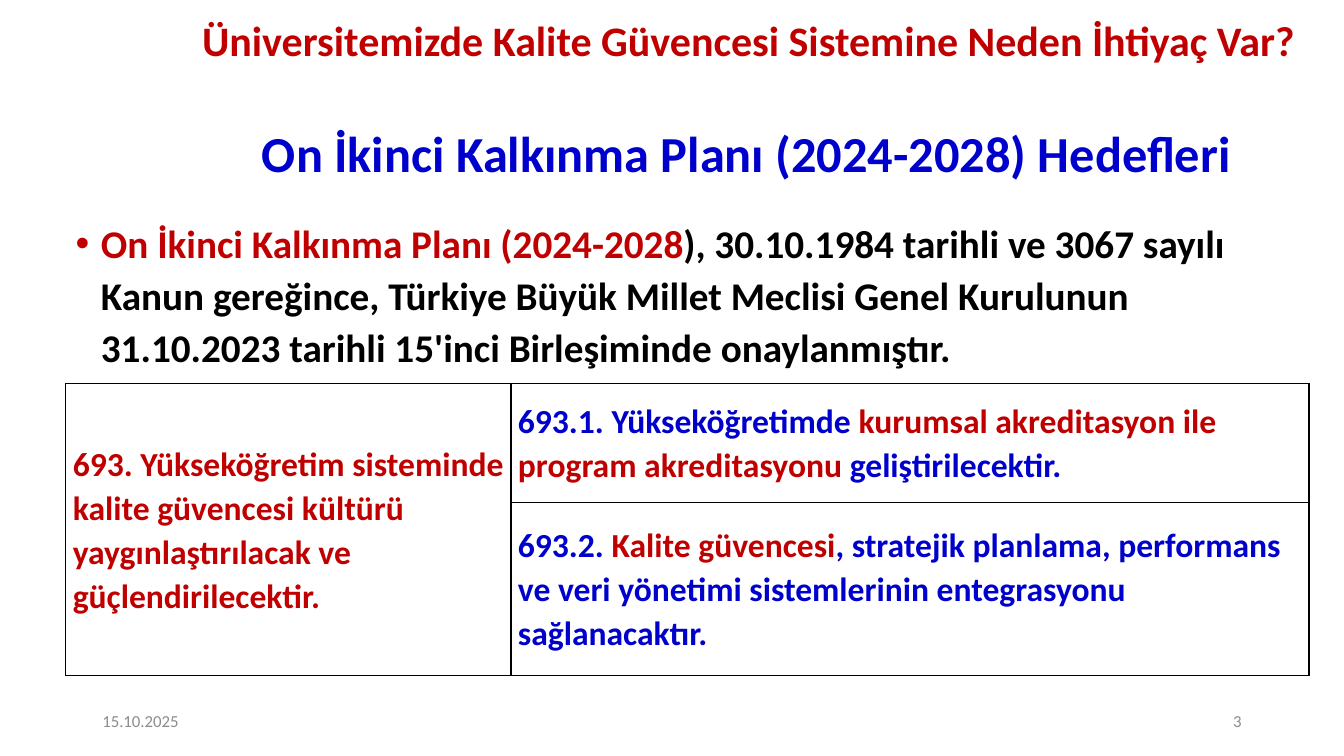
"""Build the slide on the Twelfth Development Plan and its quality assurance goals."""
from dataclasses import dataclass

from lxml import etree
from pptx import Presentation
from pptx.dml.color import RGBColor
from pptx.enum import text
from pptx.oxml import ns
from pptx.util import Pt


@dataclass(frozen=True)
class Theme:
    """Font, colours and type sizes of the slide."""
    font: str = "Calibri"
    red: str = "C00000"
    blue: str = "0000CC"
    black: str = "000000"
    grey: str = "8C8C8C"
    plan: int = 36
    question: int = 30
    body: int = 28
    goal: int = 24
    footer: int = 12


THEME = Theme()


def add_element(parent, tag, **attributes):
    """Append a DrawingML element and return it."""
    return etree.SubElement(parent, ns.qn(tag), attributes)


def write(frame, runs, *, size, bold=True, align=text.PP_ALIGN.LEFT,
          anchor=text.MSO_ANCHOR.TOP, spacing=1.0, after=0, bullet=None, indent=18):
    """Fill a text frame with one paragraph of (words, colour) runs."""
    frame.word_wrap = True
    frame.vertical_anchor = anchor
    paragraph = frame.paragraphs[0]
    if bullet:
        properties = paragraph._p.get_or_add_pPr()
        properties.set("marL", str(Pt(indent)))
        properties.set("indent", str(-Pt(indent)))
        add_element(properties, "a:buFont", typeface="Arial")
        add_element(properties, "a:buChar", char=bullet)
    paragraph.alignment = align
    paragraph.line_spacing = spacing
    paragraph.space_after = Pt(after)
    for words, colour in runs:
        run = paragraph.add_run()
        run.text = words
        run.font.name = THEME.font
        run.font.size = Pt(size)
        run.font.bold = bold
        run.font.color.rgb = RGBColor.from_string(colour)


def add_text(slide, box, runs, **style):
    """Add a text box at (left, top, width, height) in points."""
    write(slide.shapes.add_textbox(*map(Pt, box)).text_frame, runs, **style)


def outline(cell):
    """Draw a thin black border around a table cell."""
    properties = cell._tc.get_or_add_tcPr()
    for side in ("a:lnL", "a:lnR", "a:lnT", "a:lnB"):
        border = add_element(properties, side, w=str(Pt(1)))
        fill = add_element(border, "a:solidFill")
        add_element(fill, "a:srgbClr", val=THEME.black)


def add_goals(slide, box, widths, heights, goal, measures):
    """Add a table with one goal spanning the rows of its measures."""
    table = slide.shapes.add_table(len(heights), len(widths), *map(Pt, box)).table
    table.first_row = table.horz_banding = False
    for column, width in zip(table.columns, widths):
        column.width = Pt(width)
    for row, height in zip(table.rows, heights):
        row.height = Pt(height)
    for cell in table.iter_cells():
        cell.margin_left = cell.margin_right = Pt(5)
        cell.margin_top = cell.margin_bottom = 0
        cell.vertical_anchor = text.MSO_ANCHOR.MIDDLE
        outline(cell)
        cell.fill.background()
    goal_cell = table.cell(0, 0)
    goal_cell.merge(table.cell(len(heights) - 1, 0))
    measure_cells = [table.cell(row, 1) for row in range(len(measures))]
    for cell, runs in zip([goal_cell, *measure_cells], [goal, *measures]):
        write(cell.text_frame, runs, size=THEME.goal, spacing=1.07,
              anchor=text.MSO_ANCHOR.MIDDLE)


def main():
    """Compose the slide and save it."""
    deck = Presentation()
    deck.slide_width, deck.slide_height = Pt(960), Pt(540)
    slide = deck.slides.add_slide(deck.slide_layouts[6])
    centre, right = text.PP_ALIGN.CENTER, text.PP_ALIGN.RIGHT
    middle = text.MSO_ANCHOR.MIDDLE

    add_text(slide, (123, 11, 824, 60),
             [("Üniversitemizde Kalite Güvencesi Sistemine Neden İhtiyaç Var?", THEME.red)],
             size=THEME.question, align=centre, spacing=0.9)
    add_text(slide, (133, 86, 801, 51),
             [("On İkinci Kalkınma Planı (2024-2028) Hedefleri", THEME.blue)],
             size=THEME.plan, align=centre, anchor=middle, spacing=0.9)
    add_text(slide, (47, 150, 888, 99),
             [("On İkinci Kalkınma Planı (2024-2028", THEME.red),
              ("), 30.10.1984 tarihli ve 3067 sayılı Kanun gereğince, Türkiye Büyük "
               "Millet Meclisi Genel Kurulunun 31.10.2023 tarihli 15'inci Birleşiminde "
               "onaylanmıştır.", THEME.black)],
             size=THEME.body, spacing=1.1, after=4, bullet="•")

    add_goals(
        slide, (47, 274, 888, 201), widths=(318, 570), heights=(85, 116),
        goal=[("693. Yükseköğretim sisteminde kalite güvencesi kültürü "
               "yaygınlaştırılacak ve güçlendirilecektir.", THEME.red)],
        measures=[
            [("693.1. Yükseköğretimde ", THEME.blue),
             ("kurumsal akreditasyon ile program akreditasyonu", THEME.red),
             (" geliştirilecektir.", THEME.blue)],
            [("693.2. ", THEME.blue),
             ("Kalite güvencesi", THEME.red),
             (", stratejik planlama, performans ve veri yönetimi sistemlerinin "
              "entegrasyonu sağlanacaktır.", THEME.blue)],
        ])

    for left, words, align in ((66, "15.10.2025", text.PP_ALIGN.LEFT), (678, "3", right)):
        add_text(slide, (left, 500, 216, 29), [(words, THEME.grey)],
                 size=THEME.footer, bold=False, align=align, anchor=middle)

    deck.save("out.pptx")


if __name__ == "__main__":
    main()
